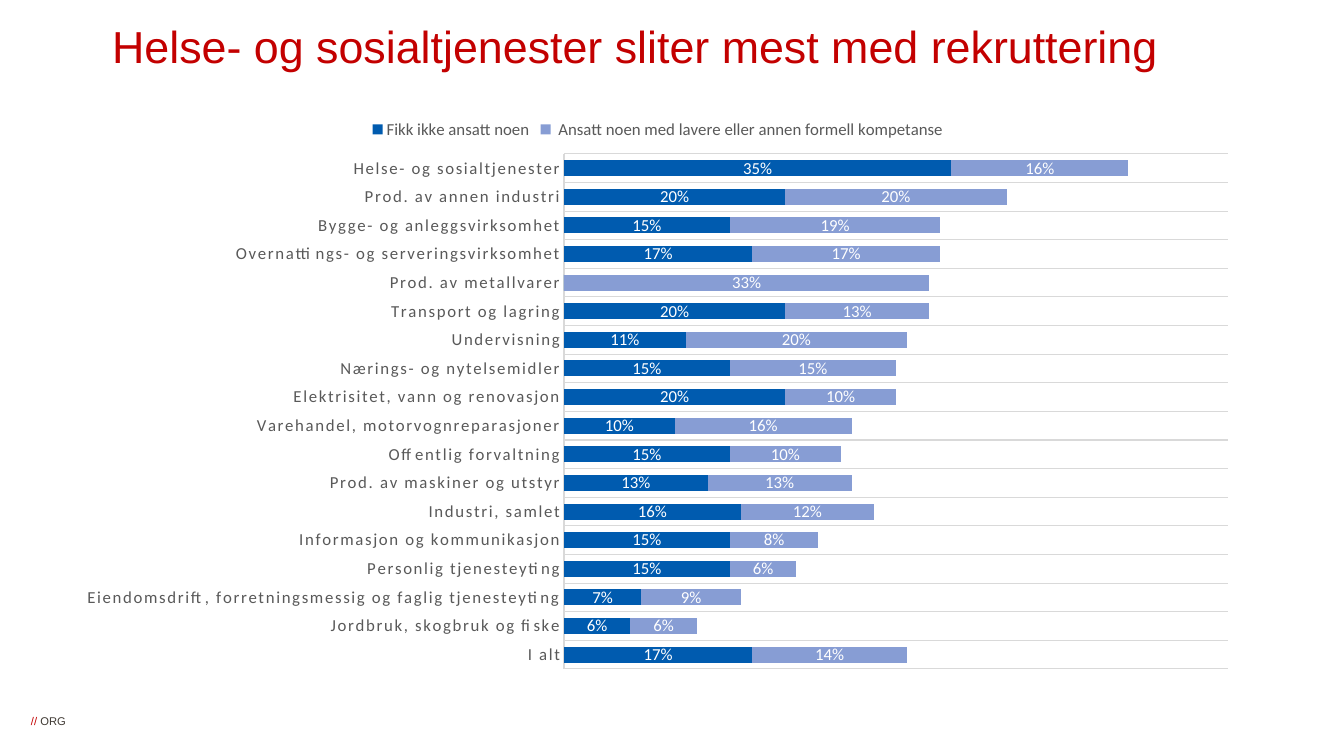
"""Build a slide with a stacked bar chart of recruitment problems by industry."""
import lxml.etree
import pptx
import pptx.chart.data
import pptx.dml.color
import pptx.enum.chart
import pptx.enum.text
import pptx.oxml.ns
import pptx.util

PX = 914400 / 100.8
THEME = {
    "red": "C30000", "ink": "3E3832", "grey": "595959", "grid": "D9D9D9",
    "dark": "005BAF", "light": "879DD4", "white": "FFFFFF",
    "heading": "Arial", "body": "Calibri",
    "title_size": 32, "chart_size": 12, "footer_size": 8,
}
SERIES = [
    ("Fikk ikke ansatt noen", "dark"),
    (" Ansatt noen med lavere eller annen formell kompetanse", "light"),
]
INDUSTRIES = [
    ("I alt", 17, 14),
    ("Jordbruk, skogbruk og fiske", 6, 6),
    ("Eiendomsdrift, forretningsmessig og faglig tjenesteyting", 7, 9),
    ("Personlig tjenesteyting", 15, 6),
    ("Informasjon og kommunikasjon", 15, 8),
    ("Industri, samlet", 16, 12),
    ("Prod. av maskiner og utstyr", 13, 13),
    ("Offentlig forvaltning", 15, 10),
    ("Varehandel, motorvognreparasjoner", 10, 16),
    ("Elektrisitet, vann og renovasjon", 20, 10),
    ("Nærings- og nytelsemidler", 15, 15),
    ("Undervisning", 11, 20),
    ("Transport og lagring", 20, 13),
    ("Prod. av metallvarer", 0, 33),
    ("Overnattings- og serveringsvirksomhet", 17, 17),
    ("Bygge- og anleggsvirksomhet", 15, 19),
    ("Prod. av annen industri", 20, 20),
    ("Helse- og sosialtjenester", 35, 16),
]


def box(*lengths):
    return [round(n * PX) for n in lengths]


def style(font, face, size, color):
    font.name = THEME[face]
    font.size = pptx.util.Pt(THEME[size])
    font.color.rgb = pptx.dml.color.RGBColor.from_string(THEME[color])


prs = pptx.Presentation()
prs.slide_width, prs.slide_height = box(1344, 756)
s = prs.slides.add_slide(prs.slide_layouts[5])

title = s.shapes.title
title.left, title.top, title.width, title.height = box(102, -10, 1159, 118)
tf = title.text_frame
tf.auto_size = pptx.enum.text.MSO_AUTO_SIZE.NONE
tf.vertical_anchor = pptx.enum.text.MSO_ANCHOR.MIDDLE
p = tf.paragraphs[0]
p.alignment = pptx.enum.text.PP_ALIGN.LEFT
p.line_spacing = 0.9
r = p.add_run()
r.text = "Helse- og sosialtjenester sliter mest med rekruttering"
style(r.font, "heading", "title_size", "red")

data = pptx.chart.data.CategoryChartData(number_format="0%")
data.categories = [row[0] for row in INDUSTRIES]
for column, (name, color) in enumerate(SERIES, 1):
    data.add_series(name, [row[column] / 100 for row in INDUSTRIES])
chart = s.shapes.add_chart(
    pptx.enum.chart.XL_CHART_TYPE.BAR_STACKED, *box(64, 108, 1188, 573), data
).chart
chart.has_title = False
chart.font.name = THEME["body"]
chart.font.size = pptx.util.Pt(THEME["chart_size"])
chart.has_legend = True
chart.legend.position = pptx.enum.chart.XL_LEGEND_POSITION.TOP
chart.legend.include_in_layout = False
style(chart.legend.font, "body", "chart_size", "grey")

axis = chart.category_axis
axis.major_tick_mark = pptx.enum.chart.XL_TICK_MARK.NONE
axis.has_major_gridlines = True
for line in (axis.format.line, axis.major_gridlines.format.line):
    line.color.rgb = pptx.dml.color.RGBColor.from_string(THEME["grid"])
    line.width = pptx.util.Pt(0.75)
style(axis.tick_labels.font, "body", "chart_size", "grey")
for props in axis._element.iter(pptx.oxml.ns.qn("a:defRPr")):
    props.set("spc", "120")

values = chart.value_axis
values.minimum_scale = 0
values.maximum_scale = 0.6
values.has_major_gridlines = False
values.visible = False

plot = chart.plots[0]
plot.gap_width = 79
plot.overlap = 100
plot.vary_by_categories = False
for column, (series, (name, color)) in enumerate(zip(plot.series, SERIES), 1):
    series.format.fill.solid()
    series.format.fill.fore_color.rgb = pptx.dml.color.RGBColor.from_string(THEME[color])
    labels = series.data_labels
    labels.show_value = True
    labels.number_format = "0%"
    labels.number_format_is_linked = False
    labels.position = pptx.enum.chart.XL_LABEL_POSITION.CENTER
    style(labels.font, "body", "chart_size", "white")
    empty = [i for i, row in enumerate(INDUSTRIES) if row[column] == 0]
    for place, i in enumerate(empty):
        label = pptx.oxml.parse_xml(
            f'<c:dLbl {pptx.oxml.ns.nsdecls("c")}><c:idx val="{i}"/><c:delete val="1"/></c:dLbl>'
        )
        labels._element.insert(place, label)

area = plot._element.getparent()
for old in area.findall(pptx.oxml.ns.qn("c:layout")):
    area.remove(old)
layout = lxml.etree.Element(pptx.oxml.ns.qn("c:layout"))
manual = lxml.etree.SubElement(layout, pptx.oxml.ns.qn("c:manualLayout"))
for tag, value in [
    ("layoutTarget", "inner"), ("xMode", "edge"), ("yMode", "edge"),
    ("x", 500 / 1188), ("y", 46 / 573), ("w", 664 / 1188), ("h", 515 / 573),
]:
    lxml.etree.SubElement(manual, pptx.oxml.ns.qn(f"c:{tag}")).set("val", str(value))
area.insert(0, layout)

footer = s.shapes.add_textbox(*box(31, 714, 36, 13))
tf = footer.text_frame
tf.margin_left = tf.margin_right = tf.margin_top = tf.margin_bottom = 0
tf.word_wrap = False
p = tf.paragraphs[0]
for text, color in [("// ", "red"), ("ORG", "ink")]:
    r = p.add_run()
    r.text = text
    style(r.font, "heading", "footer_size", color)

prs.save("out.pptx")
